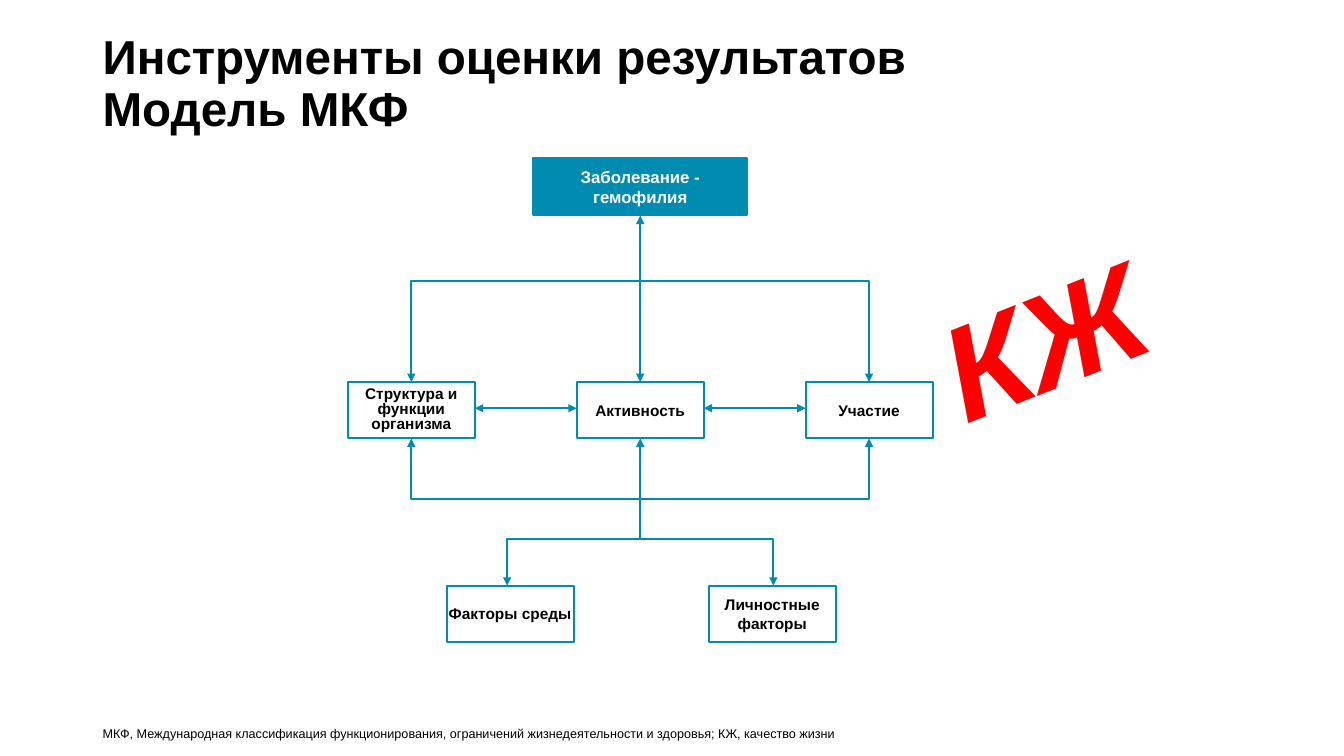
from pptx import Presentation
from pptx.dml.color import RGBColor
from pptx.enum.shapes import MSO_CONNECTOR, MSO_SHAPE
from pptx.enum.text import MSO_ANCHOR, PP_ALIGN
from pptx.oxml.ns import qn
from pptx.util import Inches, Pt
from lxml import etree

TEAL = RGBColor(0x00, 0x8B, 0xB0)
BLACK = RGBColor(0, 0, 0)
WHITE = RGBColor(255, 255, 255)
RED = RGBColor(255, 0, 0)
RECT = MSO_SHAPE.RECTANGLE
STRAIGHT = MSO_CONNECTOR.STRAIGHT
TOP, MIDDLE, BOTTOM = MSO_ANCHOR.TOP, MSO_ANCHOR.MIDDLE, MSO_ANCHOR.BOTTOM
LEFT, CENTER = PP_ALIGN.LEFT, PP_ALIGN.CENTER


def write(shape, text, size, color=BLACK, bold=True, italic=False,
          align=LEFT, anchor=MIDDLE, spacing=1.0, side=0.1, bottom=0.05):
    frame = shape.text_frame
    frame.word_wrap = True
    frame.vertical_anchor = anchor
    frame.margin_left = frame.margin_right = Inches(side)
    frame.margin_top, frame.margin_bottom = Inches(0.05), Inches(bottom)
    frame.text = text
    para = frame.paragraphs[0]
    para.alignment = align
    para.line_spacing = spacing
    for run in para.runs:
        font = run.font
        font.name, font.size = "Arial", Pt(size)
        font.bold, font.italic = bold, italic
        font.color.rgb = color


def label(slide, box, text, size, turn=0, **style):
    shape = slide.shapes.add_textbox(*map(Inches, box))
    shape.rotation = turn
    write(shape, text, size, **style)


def node(slide, box, text, size=11, fill=WHITE, **style):
    shape = slide.shapes.add_shape(RECT, *map(Inches, box))
    shape.shadow.inherit = False
    shape.fill.solid()
    shape.fill.fore_color.rgb = fill
    shape.line.color.rgb = TEAL
    shape.line.width = Pt(1.5)
    write(shape, text, size, align=CENTER, **style)


def stroke(shape, *ends):
    """Colour a line and put triangles on the named ends."""
    shape.line.color.rgb = TEAL
    shape.line.width = Pt(1.5)
    for end in ends:
        etree.SubElement(shape.line._ln, qn("a:" + end), type="triangle")


def arrow(slide, start, stop, *ends):
    line = slide.shapes.add_connector(STRAIGHT, *map(Inches, start + stop))
    stroke(line, *ends)
    etree.SubElement(line._element.spPr, qn("a:effectLst"))


def elbow(slide, mid, x, bar, tip):
    """Run along the bar from mid to x, then point at the tip."""
    pen = slide.shapes.build_freeform(Inches(mid), Inches(bar))
    pen.add_line_segments([(Inches(x), Inches(bar)), (Inches(x), Inches(tip))],
                          close=False)
    shape = pen.convert_to_shape()
    shape.shadow.inherit = False
    shape.fill.background()
    stroke(shape, "tailEnd")


def model(slide, left, top, width):
    wide, high = 1.26, 0.56
    mid = left + width / 2
    step = (width - wide) / 2
    row, base = top + 2.22, top + 4.24
    foot = row + high

    # Disease and factors
    node(slide, (mid - 1.06, top, 2.12, high), "Заболевание - гемофилия",
         size=12, fill=TEAL, color=WHITE)
    node(slide, (mid - 1.92, base, wide, high), "Факторы среды", side=0)
    node(slide, (mid + 0.68, base, wide, high), "Личностные факторы")

    # Three domains, with arrows between neighbours
    domains = [("Структура и функции организма", 0.8),
               ("Активность", 1.0), ("Участие", 1.0)]
    for i, (text, spacing) in enumerate(domains):
        x = left + i * step
        node(slide, (x, row, wide, high), text, spacing=spacing)
        if i:
            arrow(slide, (x - step + wide, row + 0.26), (x, row + 0.26),
                  "headEnd", "tailEnd")

    # Central axis
    arrow(slide, (mid, top + high + 0.01), (mid, row), "headEnd", "tailEnd")
    arrow(slide, (mid, foot), (mid, foot + 1), "headEnd")

    # Branches on both sides
    for reach, bar, tip in [(step, row - 1, row), (step, foot + 0.6, foot),
                            (1.32, foot + 1, base)]:
        for side in (-1, 1):
            elbow(slide, mid, mid + side * reach, bar, tip)


def main():
    deck = Presentation()
    deck.slide_width, deck.slide_height = Inches(13.33), Inches(7.5)
    slide = deck.slides.add_slide(deck.slide_layouts[6])
    label(slide, (0.92, 0.25, 11.5, 1.19),
          "Инструменты оценки результатов\vМодель МКФ", 34, spacing=0.9)
    label(slide, (0.92, 6.95, 10.85, 0.4),
          "МКФ, Международная классификация функционирования, ограничений "
          "жизнедеятельности и здоровья; КЖ, качество жизни",
          9, bold=False, anchor=BOTTOM, bottom=0)
    model(slide, 3.45, 1.57, 5.8)
    label(slide, (9.18, 2.29, 3.31, 1.72), "КЖ", 96, turn=338.3,
          color=RED, italic=True, anchor=TOP)
    deck.save("out.pptx")


if __name__ == "__main__":
    main()
